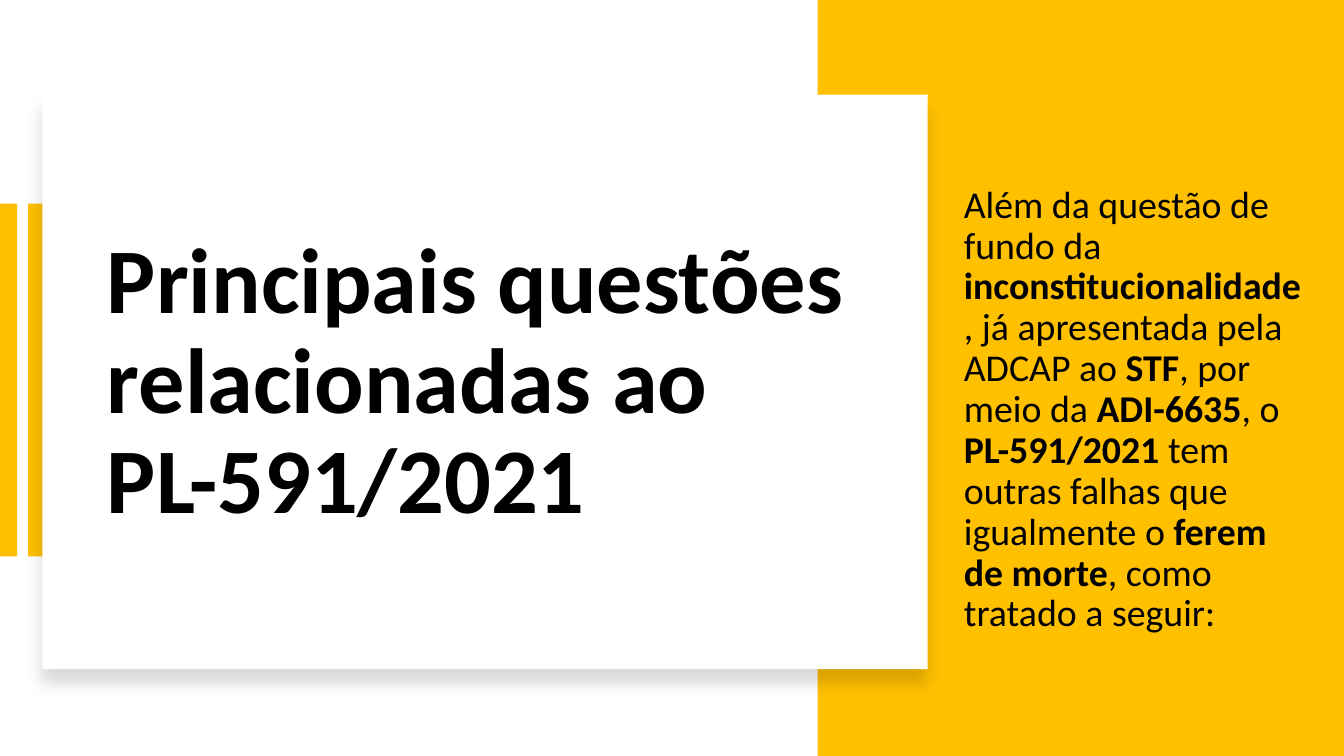
"""Builds the title slide on the main questions about PL-591/2021."""
from dataclasses import dataclass

from lxml import etree
from pptx import Presentation
from pptx.dml.color import RGBColor
from pptx.enum.shapes import MSO_SHAPE
from pptx.enum.text import MSO_ANCHOR, MSO_AUTO_SIZE, PP_ALIGN
from pptx.oxml.ns import qn
from pptx.shapes.autoshape import Shape
from pptx.slide import Slide
from pptx.util import Inches, Pt

AMBER = RGBColor(0xFF, 0xC0, 0x00)
WHITE = RGBColor(0xFF, 0xFF, 0xFF)
BLACK = RGBColor(0x00, 0x00, 0x00)
FONT = "Calibri"


@dataclass(frozen=True)
class Box:
    left: float
    top: float
    width: float
    height: float


@dataclass(frozen=True)
class Panel:
    box: Box
    color: RGBColor
    shadowed: bool = False


@dataclass(frozen=True)
class Run:
    text: str
    bold: bool = False


PANELS = [
    Panel(Box(0.28, 2.02, 0.17, 3.5), AMBER),
    Panel(Box(0, 2.02, 0.17, 3.5), AMBER),
    Panel(Box(8.11, 0, 5.22, 7.5), AMBER),
    Panel(Box(0.42, 0.94, 8.78, 5.7), WHITE, shadowed=True),
]
TITLE_BOX = Box(0.96, 1.61, 7.77, 4.39)
SUBTITLE_BOX = Box(9.46, 1.22, 3.6, 5.7)
TITLE = [Run("Principais questões relacionadas ao PL-591/2021", bold=True)]
SUBTITLE = [
    Run("Além da questão de fundo da "),
    Run("inconstitucionalidade", bold=True),
    Run(", já apresentada pela ADCAP ao "),
    Run("STF", bold=True),
    Run(", por meio da "),
    Run("ADI-6635", bold=True),
    Run(", o "),
    Run("PL-591/2021", bold=True),
    Run(" tem outras falhas que igualmente o "),
    Run("ferem de morte", bold=True),
    Run(", como tratado a seguir:"),
]


def place(shape: Shape, box: Box) -> None:
    shape.left, shape.top = Inches(box.left), Inches(box.top)
    shape.width, shape.height = Inches(box.width), Inches(box.height)


def add_soft_shadow(shape: Shape) -> None:
    effects = shape.element.spPr.find(qn("a:effectLst"))
    shadow = etree.SubElement(
        effects, qn("a:outerShdw"), blurRad=str(Pt(11)), dist=str(Pt(10)),
        dir="5400000", algn="t", rotWithShape="0")
    color = etree.SubElement(shadow, qn("a:srgbClr"), val=str(BLACK))
    etree.SubElement(color, qn("a:alpha"), val="15000")


def add_panel(slide: Slide, panel: Panel) -> None:
    shape = slide.shapes.add_shape(MSO_SHAPE.RECTANGLE, 0, 0, 0, 0)
    place(shape, panel.box)
    shape.fill.solid()
    shape.fill.fore_color.rgb = panel.color
    shape.line.fill.background()
    shape.shadow.inherit = False
    if panel.shadowed:
        add_soft_shadow(shape)


def write_text(shape: Shape, runs: list[Run], *, box: Box, size: float) -> None:
    place(shape, box)
    frame = shape.text_frame
    frame.word_wrap = True
    frame.auto_size = MSO_AUTO_SIZE.NONE
    frame.vertical_anchor = MSO_ANCHOR.MIDDLE
    paragraph = frame.paragraphs[0]
    paragraph.alignment = PP_ALIGN.LEFT
    paragraph.line_spacing = 0.9
    paragraph.space_before = Pt(0)
    for part in runs:
        run = paragraph.add_run()
        run.text = part.text
        run.font.name = FONT
        run.font.size = Pt(size)
        run.font.bold = part.bold
        run.font.color.rgb = BLACK


def main() -> None:
    presentation = Presentation()
    presentation.slide_width = Inches(13.33)
    presentation.slide_height = Inches(7.5)
    slide = presentation.slides.add_slide(presentation.slide_layouts[0])
    title, subtitle = slide.placeholders
    for panel in PANELS:
        add_panel(slide, panel)
    write_text(title, TITLE, box=TITLE_BOX, size=66)
    write_text(subtitle, SUBTITLE, box=SUBTITLE_BOX, size=27)
    for placeholder in (title, subtitle):
        slide.shapes.element.append(placeholder.element)
    presentation.save("out.pptx")


if __name__ == "__main__":
    main()
